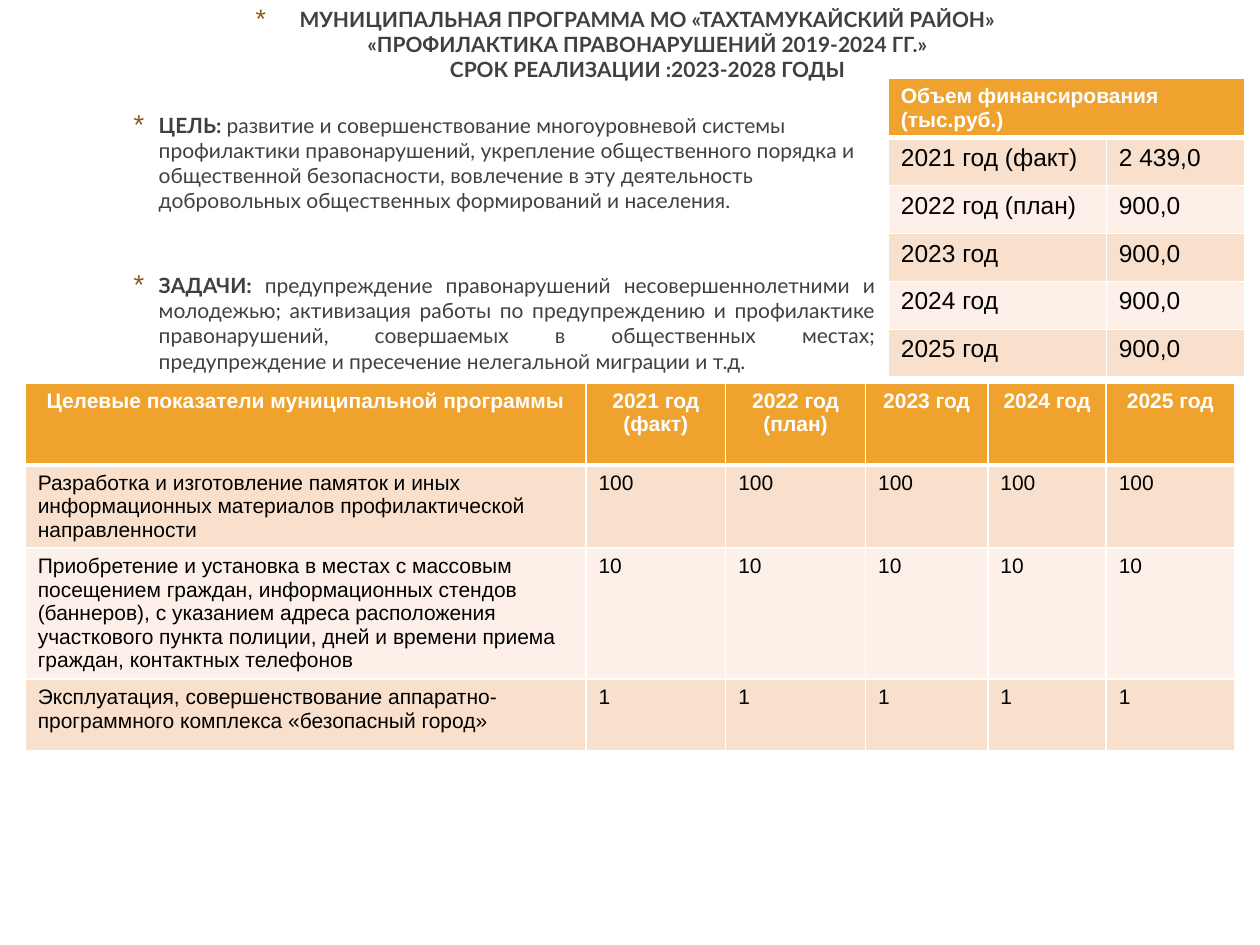
"""Build a slide on a municipal crime prevention programme: goals, funding and targets."""
from lxml import etree
from pptx import Presentation
from pptx import util as u
from pptx.dml.color import RGBColor
from pptx.enum import text
from pptx.oxml import ns

ORANGE = RGBColor(0xF0, 0xA2, 0x2E)
PEACH = RGBColor(0xF9, 0xE0, 0xCD)
CREAM = RGBColor(0xFC, 0xF0, 0xE8)
WHITE = RGBColor(0xFF, 0xFF, 0xFF)
BLACK = RGBColor(0, 0, 0)
GRAY = RGBColor(0x40, 0x40, 0x40)
BROWN = RGBColor(0x91, 0x58, 0x1F)

LEFT, CENTER, JUSTIFY = text.PP_ALIGN.LEFT, text.PP_ALIGN.CENTER, text.PP_ALIGN.JUSTIFY

TITLE = [
    "МУНИЦИПАЛЬНАЯ ПРОГРАММА МО «ТАХТАМУКАЙСКИЙ РАЙОН»",
    "«ПРОФИЛАКТИКА ПРАВОНАРУШЕНИЙ 2019-2024 ГГ.»",
    "СРОК РЕАЛИЗАЦИИ :2023-2028 ГОДЫ",
]
AIMS = [
    ("ЦЕЛЬ: ",
     "развитие и совершенствование многоуровневой системы профилактики правонарушений, "
     "укрепление общественного порядка и общественной безопасности, вовлечение в эту "
     "деятельность добровольных общественных формирований и населения.",
     {"alignment": LEFT, "space_before": u.Pt(0), "space_after": u.Pt(3)}),
    ("ЗАДАЧИ: ",
     "предупреждение правонарушений несовершеннолетними и молодежью; активизация работы "
     "по предупреждению и профилактике правонарушений, совершаемых в общественных местах; "
     "предупреждение и пресечение нелегальной миграции и т.д.",
     {"alignment": JUSTIFY, "space_before": u.Pt(31), "space_after": u.Pt(3)}),
]
FUNDING = {
    "at": (7.05, 0.62), "columns": [1.73, 1.1], "rows": [0.47] + [0.38] * 5,
    "size": 14, "header_align": LEFT,
    "cells": [
        ("Объем финансирования (тыс.руб.)", ""),
        ("2021 год (факт)", "2 439,0"),
        ("2022 год (план)", "900,0"),
        ("2023 год", "900,0"),
        ("2024 год", "900,0"),
        ("2025 год", "900,0"),
    ],
}
TARGETS = {
    "at": (0.2, 3.04), "columns": [4.45, 1.11, 1.11, 0.97, 0.94, 1.02],
    "rows": [0.65, 0.65, 1.04, 0.57], "size": 12, "header_align": CENTER,
    "cells": [
        ("Целевые показатели муниципальной программы", "2021 год (факт)",
         "2022 год (план)", "2023 год", "2024 год", "2025 год"),
        ("Разработка и изготовление памяток и иных информационных материалов "
         "профилактической направленности", *["100"] * 5),
        ("Приобретение и установка в местах с массовым посещением граждан, "
         "информационных стендов (баннеров), с указанием адреса расположения участкового "
         "пункта полиции, дней и времени приема граждан, контактных телефонов", *["10"] * 5),
        ("Эксплуатация, совершенствование аппаратно-программного комплекса "
         "«безопасный город»", *["1"] * 5),
    ],
}


def apply(target, values):
    for name, value in values.items():
        setattr(target, name, value)


def add_span(para, words, color, **font):
    span = para.add_run()
    span.text = words
    apply(span.font, font)
    span.font.color.rgb = color


def add_bullet(para, margin, hanging, percent):
    props = para._p.get_or_add_pPr()
    props.set("marL", str(u.Inches(margin)))
    props.set("indent", str(-u.Inches(hanging)))
    color = etree.SubElement(props, ns.qn("a:buClr"))
    etree.SubElement(color, ns.qn("a:srgbClr"), val=str(BROWN))
    etree.SubElement(props, ns.qn("a:buSzPct"), val=str(percent * 1000))
    etree.SubElement(props, ns.qn("a:buFont"), typeface="Arial")
    etree.SubElement(props, ns.qn("a:buChar"), char="*")


def place(box, left, top, width, height):
    apply(box, {"left": u.Inches(left), "top": u.Inches(top),
                "width": u.Inches(width), "height": u.Inches(height)})
    apply(box.text_frame, {"word_wrap": True, "auto_size": text.MSO_AUTO_SIZE.NONE,
                           "vertical_anchor": text.MSO_ANCHOR.TOP})
    return box.text_frame


def add_borders(cell, row):
    props = cell._tc.get_or_add_tcPr()
    widths = {"L": 1, "R": 1, "T": 3 if row == 1 else 1, "B": 3 if row == 0 else 1}
    for side, width in widths.items():
        line = etree.SubElement(props, ns.qn(f"a:ln{side}"), w=str(u.Pt(width)))
        fill = etree.SubElement(line, ns.qn("a:solidFill"))
        etree.SubElement(fill, ns.qn("a:srgbClr"), val=str(WHITE))


def add_grid(page, data):
    columns, rows = data["columns"], data["rows"]
    frame = page.shapes.add_table(len(rows), len(columns), *map(u.Inches, data["at"]),
                                  u.Inches(sum(columns)), u.Inches(sum(rows)))
    table = frame.table
    for column, width in zip(table.columns, columns):
        column.width = u.Inches(width)
    for row, height in zip(table.rows, rows):
        row.height = u.Inches(height)
    for r, words in enumerate(data["cells"]):
        header = r == 0
        for c, word in enumerate(words):
            cell = table.cell(r, c)
            add_borders(cell, r)
            cell.fill.solid()
            cell.fill.fore_color.rgb = ORANGE if header else PEACH if r % 2 else CREAM
            if word:
                para = cell.text_frame.paragraphs[0]
                para.alignment = data["header_align"] if header else LEFT
                add_span(para, word, WHITE if header else BLACK, name="Arial", bold=header,
                         size=u.Pt(12 if header else data["size"]))
    return table


def main():
    deck = Presentation()
    apply(deck, {"slide_width": u.Inches(10), "slide_height": u.Inches(7.5)})
    page = deck.slides.add_slide(deck.slide_layouts[1])

    para = place(page.shapes.title, 0.28, 0, 9.37, 1.07).paragraphs[0]
    para.alignment = CENTER
    add_bullet(para, 0.35, 0.35, 128)
    for index, line in enumerate(TITLE):
        if index:
            para.add_line_break()
        add_span(para, line, GRAY, name="Lato", size=u.Pt(12), bold=True)

    body = place(page.placeholders[1], 0.91, 0.84, 6.14, 2.52)
    for index, (label, words, layout) in enumerate(AIMS):
        para = body.add_paragraph() if index else body.paragraphs[0]
        apply(para, layout)
        add_bullet(para, 0.25, 0.2, 130)
        for part, bold in ((label, True), (words, False)):
            add_span(para, part, GRAY, name="Lato", size=u.Pt(12), bold=bold)

    funding = add_grid(page, FUNDING)
    funding.cell(0, 0).merge(funding.cell(0, 1))
    add_grid(page, TARGETS)
    deck.save("out.pptx")


if __name__ == "__main__":
    main()
